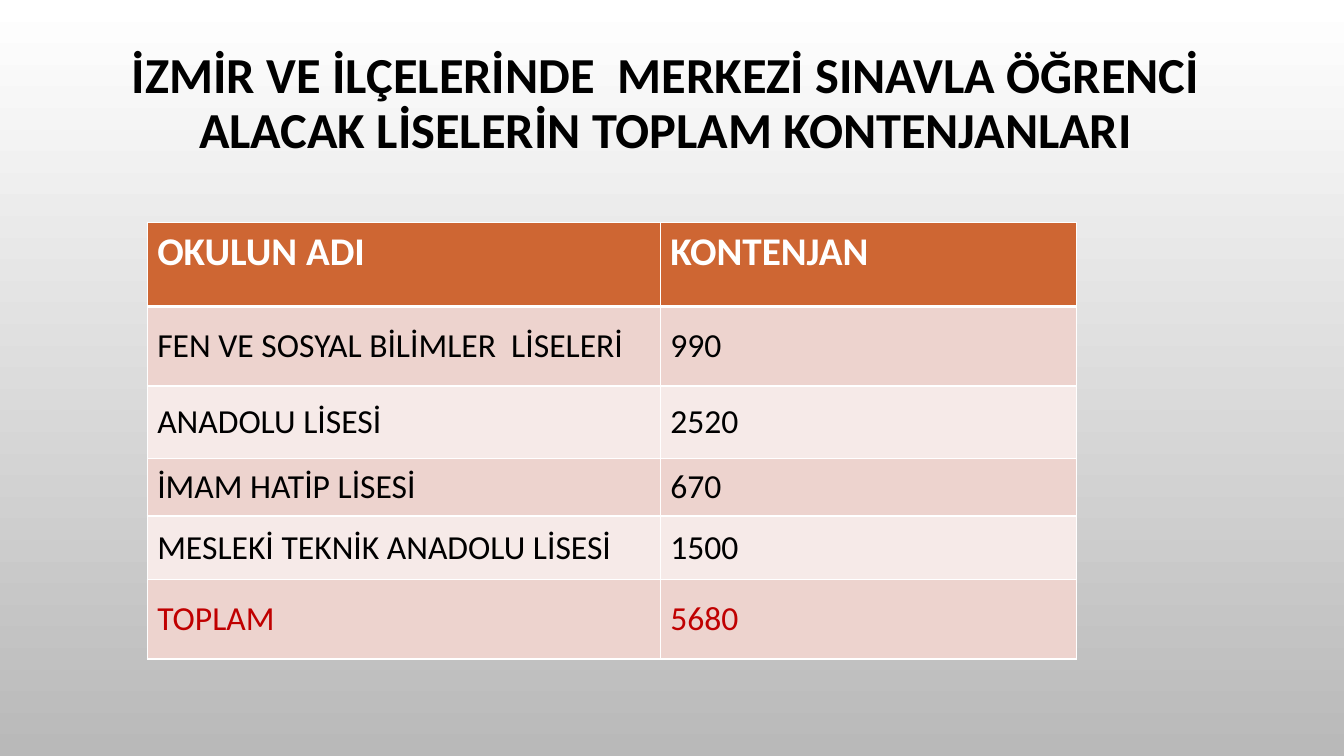
from lxml.etree import SubElement
from pptx import Presentation
from pptx.dml.color import RGBColor
from pptx.enum.text import MSO_ANCHOR as Anchor, PP_ALIGN as Align
from pptx.oxml.ns import qn
from pptx.util import Inches, Pt

TITLE = "İZMİR VE İLÇELERİNDE  MERKEZİ SINAVLA ÖĞRENCİ ALACAK LİSELERİN TOPLAM KONTENJANLARI"
ROWS = [
    ("OKULUN ADI", "KONTENJAN"),
    ("FEN VE SOSYAL BİLİMLER  LİSELERİ", "990"),
    ("ANADOLU LİSESİ", "2520"),
    ("İMAM HATİP LİSESİ", "670"),
    ("MESLEKİ TEKNİK ANADOLU LİSESİ", "1500"),
    ("TOPLAM", "5680"),
]
WIDTHS = [5.09, 4.13]
HEIGHTS = [0.83, 0.79, 0.72, 0.57, 0.63, 0.79]
COLORS = {
    "white": "FFFFFF", "gray": "B9B9B9", "black": "000000", "head": "CE6633",
    "dark": "EDD3CE", "light": "F6EAE8", "total": "C00000",
}


def rgb(name):
    return RGBColor.from_string(COLORS[name])


def style(par, size, color, bold):
    font = par.font
    font.name, font.size, font.bold = "Calibri", Pt(size), bold
    font.color.rgb = rgb(color)


def border(cell, top, bottom):
    """Draw white cell edges; side edges are 1 pt. Call before filling the cell."""
    props = cell._tc.get_or_add_tcPr()
    for tag, width in (("lnL", 1), ("lnR", 1), ("lnT", top), ("lnB", bottom)):
        line = SubElement(props, qn(f"a:{tag}"), w=str(Pt(width)))
        fill = SubElement(line, qn("a:solidFill"))
        SubElement(fill, qn("a:srgbClr"), val=COLORS["white"])


def add_title(slide):
    box = slide.shapes.add_textbox(Inches(0.88), Inches(0.33), Inches(11.45), Inches(1.42))
    frame = box.text_frame
    frame.word_wrap = True
    frame.vertical_anchor = Anchor.MIDDLE
    par = frame.paragraphs[0]
    par.text = TITLE
    par.alignment = Align.CENTER
    par.line_spacing = 0.9
    style(par, 36, "black", True)


def add_quotas(slide):
    table = slide.shapes.add_table(
        len(ROWS), len(WIDTHS), Inches(1.46), Inches(2.21),
        Inches(sum(WIDTHS)), Inches(sum(HEIGHTS))).table
    table.horz_banding = False
    for col, width in zip(table.columns, WIDTHS):
        col.width = Inches(width)
    last = len(ROWS) - 1
    for r, texts in enumerate(ROWS):
        table.rows[r].height = Inches(HEIGHTS[r])
        head = r == 0
        band = "head" if head else "dark" if r % 2 else "light"
        color = "white" if head else "total" if r == last else "black"
        for c, text in enumerate(texts):
            cell = table.cell(r, c)
            border(cell, 3 if r == 1 else 1, 3 if head else 1)
            cell.fill.solid()
            cell.fill.fore_color.rgb = rgb(band)
            cell.vertical_anchor = Anchor.TOP if head else Anchor.MIDDLE
            cell.text = text
            style(cell.text_frame.paragraphs[0], 28 if head else 24, color, head)


def main():
    deck = Presentation()
    deck.slide_width, deck.slide_height = Inches(13.33), Inches(7.5)
    slide = deck.slides.add_slide(deck.slide_layouts[6])
    back = slide.background.fill
    back.gradient()
    back.gradient_angle = 270
    for stop, name in zip(back.gradient_stops, ("white", "gray")):
        stop.color.rgb = rgb(name)
    add_title(slide)
    add_quotas(slide)
    deck.save("out.pptx")


if __name__ == "__main__":
    main()
